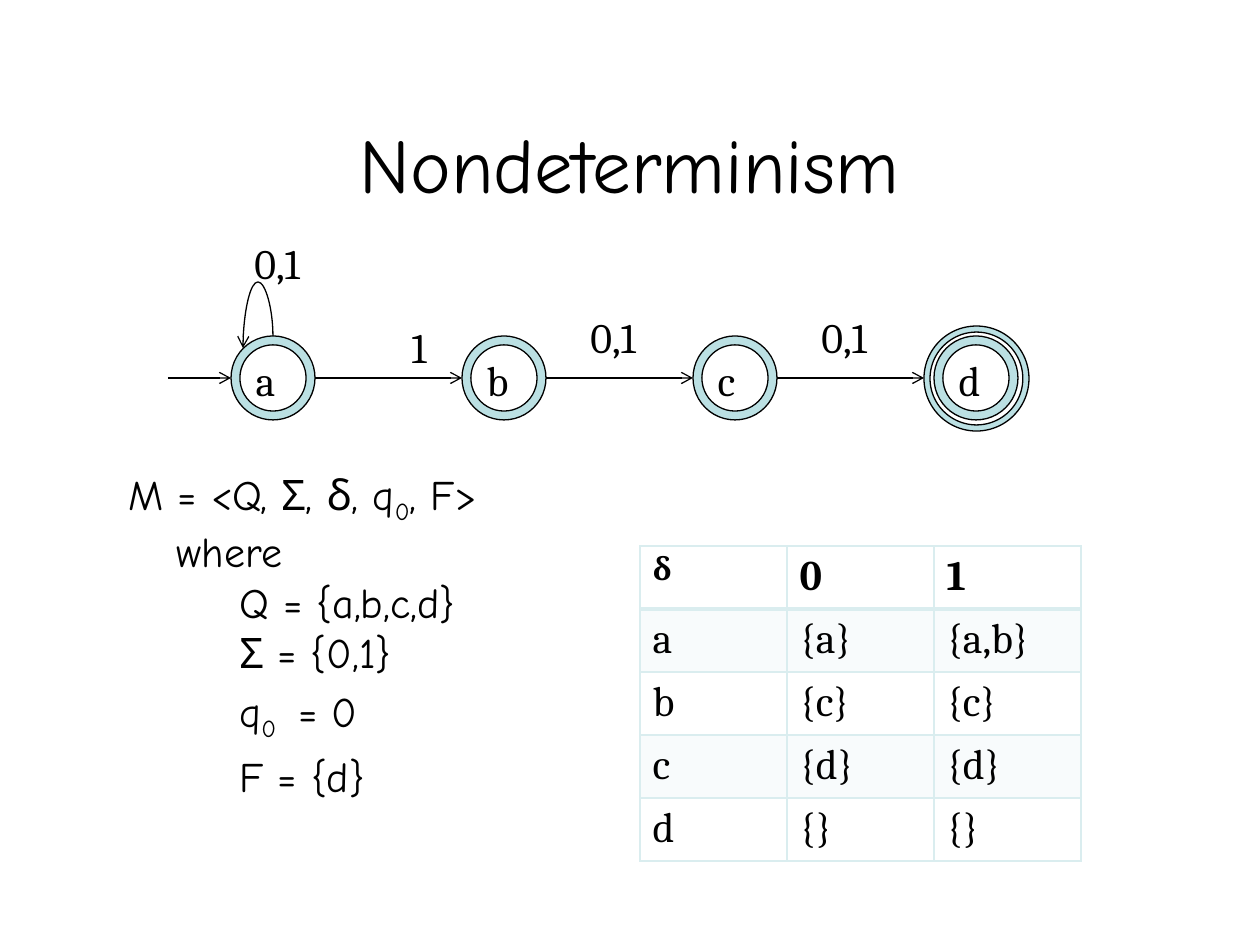
from lxml.etree import SubElement as Sub
from pptx import Presentation
from pptx.dml.color import RGBColor as Rgb
from pptx.enum.shapes import MSO_CONNECTOR as Link, MSO_SHAPE as Kind
from pptx.enum.text import MSO_ANCHOR as Anchor, MSO_AUTO_SIZE as Auto, PP_ALIGN as Align
from pptx.oxml.ns import qn
from pptx.util import Emu, Pt

PX = 914400 // 126
HUES = {"ink": "000000", "ring": "BBE0E3", "grid": "DAEDEF", "band": "F8FBFC"}
SANS, SERIF = "Comic Neue", "Cambria"
MID, SIZE, OUTER = 378, 84, 105
STEP, FIRST = 231, 231


def px(*nums):
    return [Emu(n * PX) for n in nums]


def hue(name):
    return Rgb.from_string(HUES[name])


def write(para, text, size=24, font=SERIF, bold=False, base=0):
    """Add text to a paragraph; each newline becomes a line break."""
    for i, line in enumerate(text.split("\n")):
        if i:
            para.add_line_break()
            Sub(para._p[-1], qn("a:rPr"), sz=str(size * 100))
        run = para.add_run()
        run.text = line
        face = run.font
        face.size, face.name, face.bold = Pt(size), font, bold
        face.color.rgb = hue("ink")
        if base:
            face._element.set("baseline", str(base * 1000))


def place(shape, *box):
    shape.left, shape.top, shape.width, shape.height = px(*box)


def ring(shapes, left, size, band, text=""):
    """Draw a state circle centred on the row of states."""
    shape = shapes.add_shape(Kind.DONUT, *px(left, MID - size // 2, size, size))
    shape.adjustments[0] = band
    shape.shadow.inherit = False
    shape.fill.solid()
    shape.fill.fore_color.rgb = hue("ring")
    shape.line.color.rgb = hue("ink")
    shape.line.width = Pt(0.75)
    if text:
        frame = shape.text_frame
        frame.vertical_anchor = Anchor.TOP
        frame.paragraphs[0].alignment = Align.LEFT
        write(frame.paragraphs[0], text)


def arrow(shapes, *ends, kind=Link.STRAIGHT):
    wire = shapes.add_connector(kind, *px(*ends))
    wire.line.color.rgb = hue("ink")
    wire.line.width = Pt(0.75)
    Sub(wire.line._get_or_add_ln(), qn("a:tailEnd"), type="arrow")
    Sub(wire._element.spPr, qn("a:effectLst"))
    return wire


def loop(shapes):
    """Bend a curve from the top of the first state back to its side."""
    props = arrow(shapes, 252, 327, 264, 357, kind=Link.CURVE)._element.spPr
    form = props.find(qn("a:xfrm"))
    for key, val in (("rot", "16200000"), ("flipH", "1"), ("flipV", "1")):
        form.set(key, val)
    Sub(props.find(".//" + qn("a:avLst")), qn("a:gd"), name="adj1", fmla="val -450000")


def label(shapes, text, left, top, width, height=63):
    frame = shapes.add_textbox(*px(left, top, width, height)).text_frame
    frame.word_wrap = True
    write(frame.paragraphs[0], text)


def graph(shapes):
    for i, name in enumerate("abcd"):
        left = FIRST + i * STEP
        last = name == "d"
        ring(shapes, left + (OUTER - SIZE) // 2 * last, SIZE, 0.106, name)
        if last:
            ring(shapes, left, OUTER, 0.058)
        start = left - STEP + SIZE if i else 168
        arrow(shapes, start, MID, left, MID)
    loop(shapes)
    label(shapes, "0,1", 242, 231, 84)
    label(shapes, "1", 399, 315, 42, 115)
    for left in (578, 809):
        label(shapes, "0,1", left, 305, 84)


def title(shape):
    place(shape, 94, 84, 1071, 158)
    frame = shape.text_frame
    frame.vertical_anchor = Anchor.MIDDLE
    frame.paragraphs[0].alignment = Align.CENTER
    write(frame.paragraphs[0], "Nondeterminism", size=44, font=SANS)


def body(shape):
    place(shape, 116, 462, 483, 483)
    frame = shape.text_frame
    frame.auto_size = Auto.NONE
    paras = (
        ("M = <Q, Σ, δ, q", "0", ", F>\nwhere\n\tQ = {a,b,c,d}\n\tΣ = {0,1}"),
        ("\t\tq", "0 ", " = 0"),
        ("\t\tF = {d}",),
    )
    for i, parts in enumerate(paras):
        para = frame.add_paragraph() if i else frame.paragraphs[0]
        rules = para._p.get_or_add_pPr()
        rules.set("marL", str(48 * PX))
        rules.set("indent", str(-48 * PX))
        Sub(rules, qn("a:buNone"))
        for j, text in enumerate(parts):
            write(para, text, font=SANS, base=-25 * (j % 2))


def edge(cell, side, width):
    line = Sub(cell._tc.get_or_add_tcPr(), qn("a:" + side), w=str(Pt(width)))
    Sub(Sub(line, qn("a:solidFill")), qn("a:srgbClr"), val=HUES["grid"])


def table(shapes):
    rows = (
        ("δ", "0", "1"),
        ("a", "{a}", "{a,b}"),
        ("b", "{c}", "{c}"),
        ("c", "{d}", "{d}"),
        ("d", "{}", "{}"),
    )
    grid = shapes.add_table(5, 3, *px(640, 546, 441, 290)).table
    for r, row in enumerate(rows):
        for c, text in enumerate(row):
            cell = grid.cell(r, c)
            for side in ("lnL", "lnR", "lnT", "lnB"):
                thick = (r, side) in ((0, "lnB"), (1, "lnT"))
                edge(cell, side, 2 if thick else 1)
            if r % 2:
                cell.fill.solid()
                cell.fill.fore_color.rgb = hue("band")
            else:
                cell.fill.background()
            write(cell.text_frame.paragraphs[0], text,
                  size=18 if text == "δ" else 24, bold=r == 0)


def main():
    deck = Presentation()
    deck.slide_width, deck.slide_height = px(1260, 945)
    slide = deck.slides.add_slide(deck.slide_layouts[1])
    title(slide.shapes.title)
    body(slide.placeholders[1])
    graph(slide.shapes)
    table(slide.shapes)
    deck.save("out.pptx")


if __name__ == "__main__":
    main()
